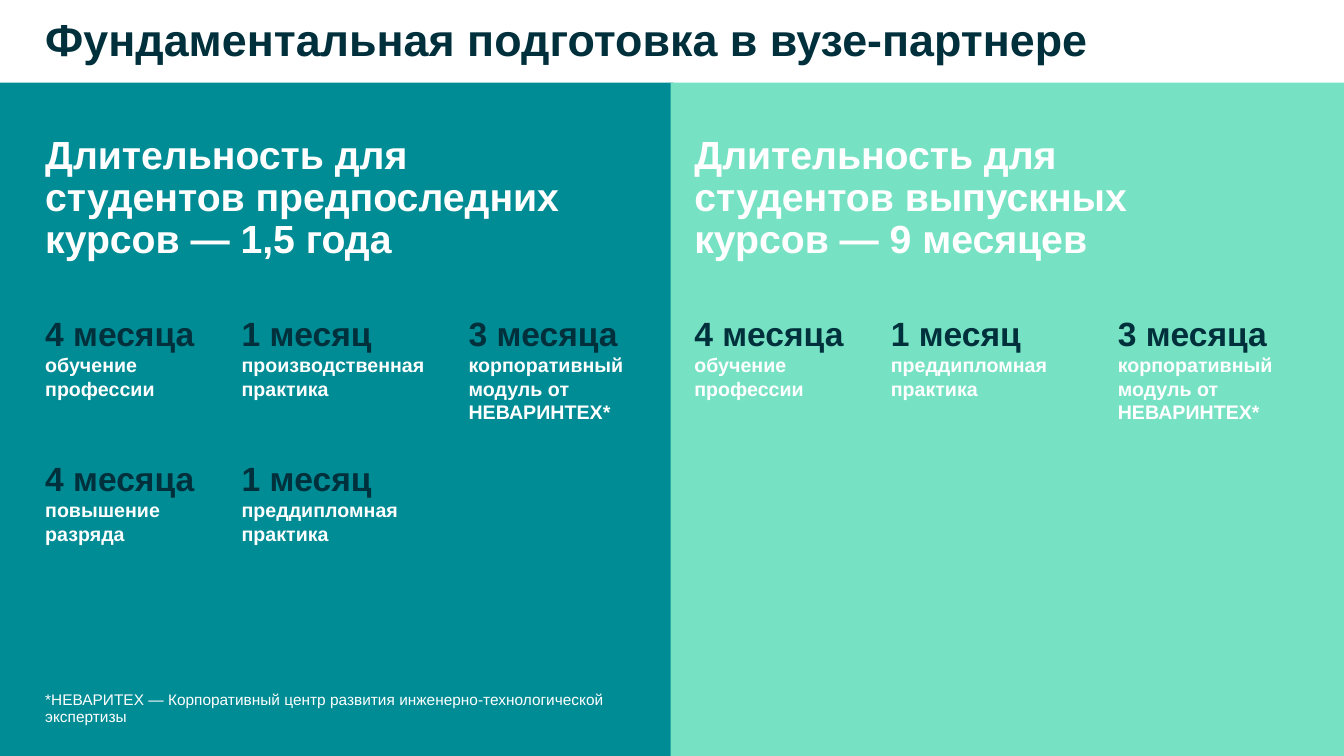
from pptx import Presentation
from pptx.dml.color import RGBColor as RGB
from pptx.enum.shapes import MSO_SHAPE as SHAPE
from pptx.enum.text import MSO_ANCHOR as ANCHOR, PP_ALIGN as ALIGN
from pptx.util import Cm, Pt

COLORS = {"teal": "008C95", "mint": "77E2C3", "dark": "00303C", "white": "FFFFFF"}
FONT = "Arial"
TITLE = "Фундаментальная подготовка в вузе-партнере"
FOOTNOTE = "*НЕВАРИТЕХ — Корпоративный центр развития инженерно-технологической экспертизы"
MODULE = ("3 месяца", "корпоративный модуль от НЕВАРИНТЕХ*")
PANELS = [
    {
        "fill": "teal",
        "heading": "Длительность для студентов предпоследних курсов — 1,5 года",
        "stages": [
            [("4 месяца", "обучение профессии"),
             ("1 месяц", "производственная практика"), MODULE],
            [("4 месяца", "повышение разряда"),
             ("1 месяц", "преддипломная практика")],
        ],
    },
    {
        "fill": "mint",
        "heading": "Длительность для студентов выпускных курсов — 9 месяцев",
        "stages": [
            [("4 месяца", "обучение профессии"),
             ("1 месяц", "преддипломная практика"), MODULE],
        ],
    },
]

SLIDE_W, SLIDE_H = 33.87, 19.05
PANEL = 16.97
MARGIN, TEXT_STEP = 1.14, 16.36
COLUMNS = [0, 4.95, 10.67]
STAGE_TOP, ROW_STEP = 7.75, 3.66
BOX_H = 2.82


def add_text(s, text, *, x, y, w, h=BOX_H, size=14, color="white", bold=True,
             spacing=0.9, lead=None, inset=(0, 0.13, 0.25, 0.13)):
    """Add a text box, optionally opening with a larger dark lead line."""
    tf = s.shapes.add_textbox(Cm(x), Cm(y), Cm(w), Cm(h)).text_frame
    tf.word_wrap = True
    tf.vertical_anchor = ANCHOR.TOP
    tf.margin_left, tf.margin_top, tf.margin_right, tf.margin_bottom = map(Cm, inset)
    p = tf.paragraphs[0]
    p.alignment = ALIGN.LEFT
    p.line_spacing = spacing
    runs = [(text, size, color)]
    if lead:
        runs.insert(0, (lead, 24, "dark"))
    for i, (words, points, tone) in enumerate(runs):
        if i:
            p.add_line_break()
        r = p.add_run()
        r.text = words
        r.font.name = FONT
        r.font.size = Pt(points)
        r.font.bold = bold
        r.font.color.rgb = RGB.from_string(COLORS[tone])


def main():
    prs = Presentation()
    prs.slide_width, prs.slide_height = Cm(SLIDE_W), Cm(SLIDE_H)
    s = prs.slides.add_slide(prs.slide_layouts[6])

    for i, panel in enumerate(PANELS):
        sp = s.shapes.add_shape(SHAPE.RECTANGLE, Cm(i * (SLIDE_W - PANEL)),
                                Cm(SLIDE_H - PANEL), Cm(PANEL), Cm(PANEL))
        sp.shadow.inherit = False
        sp.fill.solid()
        sp.fill.fore_color.rgb = RGB.from_string(COLORS[panel["fill"]])
        sp.line.fill.background()

    add_text(s, TITLE, x=MARGIN, y=0.33, w=31.5, size=32, color="dark")
    for i, panel in enumerate(PANELS):
        left = MARGIN + i * TEXT_STEP
        add_text(s, panel["heading"], x=left, y=3.28, w=14.53, size=28)
        for row, stages in enumerate(panel["stages"]):
            for offset, (duration, stage) in zip(COLUMNS, stages):
                add_text(s, stage, x=left + offset, y=STAGE_TOP + row * ROW_STEP,
                         w=5.03, lead=duration, spacing=1.0)
    add_text(s, FOOTNOTE, x=MARGIN, y=17.45, w=15.24, h=0.86, size=11,
             bold=False, inset=(0, 0, 0, 0))

    prs.save("out.pptx")


if __name__ == "__main__":
    main()
